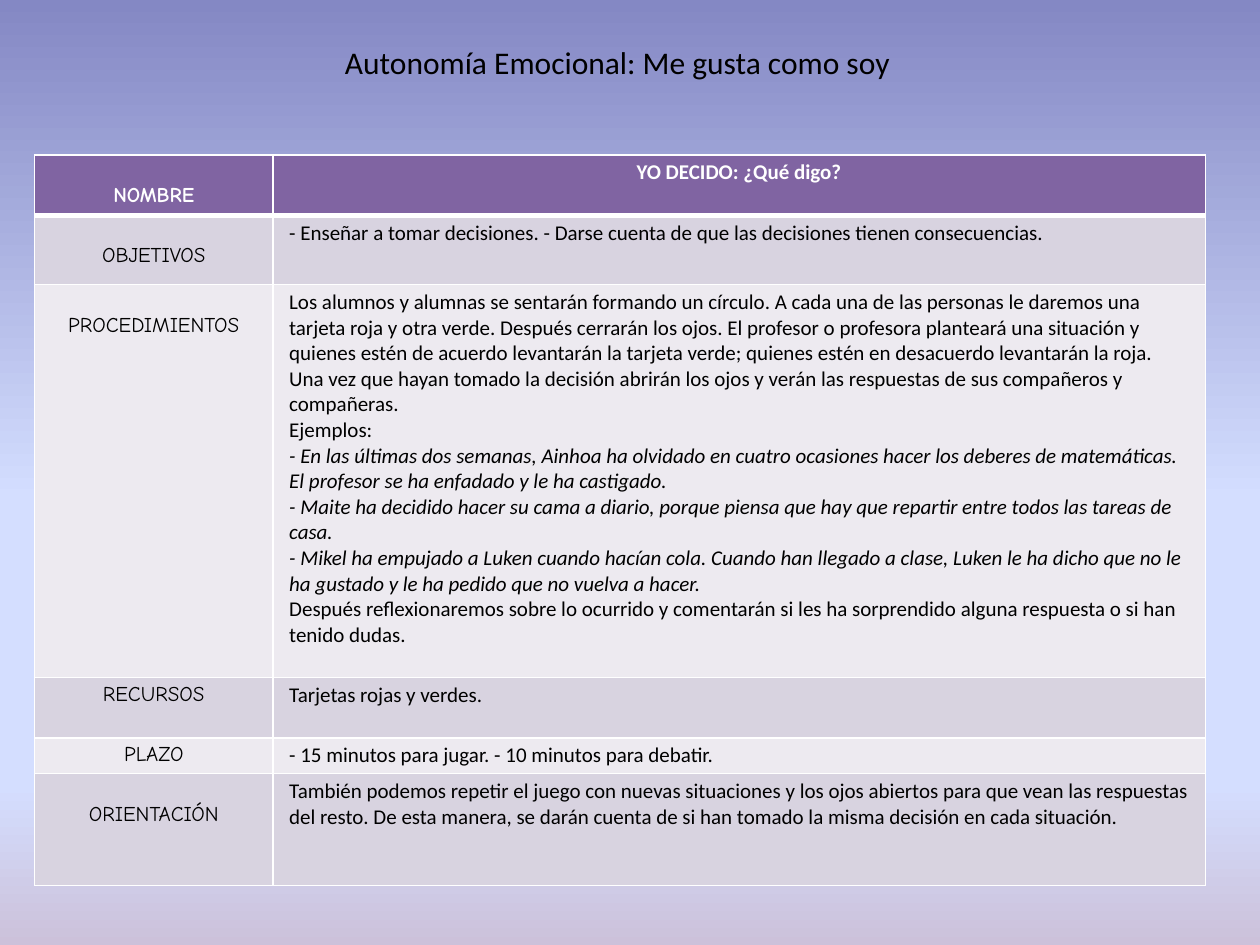
from lxml.etree import SubElement
from pptx import Presentation
from pptx.dml.color import RGBColor
from pptx.enum.text import MSO_ANCHOR, MSO_AUTO_SIZE, PP_ALIGN
from pptx.oxml.ns import qn
from pptx.util import Cm, Pt

COLORS = {
    "header": "8064A2",
    "band_dark": "D8D3E0",
    "band_light": "EDEAF0",
    "white": "FFFFFF",
    "black": "000000",
}
BACKGROUND_STOPS = [(0, "8488C4"), (53, "D4DEFF"), (83, "D4DEFF"), (100, "CCC1DA")]
COLUMN_WIDTHS = [4.8, 18.8]
LEFT, CENTER, JUSTIFY = PP_ALIGN.LEFT, PP_ALIGN.CENTER, PP_ALIGN.JUSTIFY

PROCEDURE = [
    "Los alumnos y alumnas se sentarán formando un círculo. A cada una de las personas "
    "le daremos una tarjeta roja y otra verde. Después cerrarán los ojos. El profesor o "
    "profesora planteará una situación y quienes estén de acuerdo levantarán la tarjeta "
    "verde; quienes estén en desacuerdo levantarán la roja. Una vez que hayan tomado la "
    "decisión abrirán los ojos y verán las respuestas de sus compañeros y compañeras.",
    "Ejemplos:",
    "- En las últimas dos semanas, Ainhoa ha olvidado en cuatro ocasiones hacer los "
    "deberes de matemáticas. El profesor se ha enfadado y le ha castigado.",
    "- Maite ha decidido hacer su cama a diario, porque piensa que hay que repartir "
    "entre todos las tareas de casa.",
    "- Mikel ha empujado a Luken cuando hacían cola. Cuando han llegado a clase, Luken "
    "le ha dicho que no le ha gustado y le ha pedido que no vuelva a hacer.",
    "Después reflexionaremos sobre lo ocurrido y comentarán si les ha sorprendido alguna "
    "respuesta o si han tenido dudas.",
]
GUIDANCE = (
    "También podemos repetir el juego con nuevas situaciones y los ojos abiertos para que "
    "vean las respuestas del resto. De esta manera, se darán cuenta de si han tomado la "
    "misma decisión en cada situación."
)
# label, paragraphs, alignment, row height, label lowered by one line
ROWS = [
    ("NOMBRE", ["YO DECIDO: ¿Qué digo?"], CENTER, 1.22, True),
    ("OBJETIVOS", ["- Enseñar a tomar decisiones. - Darse cuenta de que las decisiones "
                   "tienen consecuencias."], JUSTIFY, 1.4, True),
    ("PROCEDIMIENTOS", PROCEDURE, LEFT, 7.92, True),
    ("RECURSOS", ["Tarjetas rojas y verdes."], JUSTIFY, 1.22, False),
    ("PLAZO", ["- 15 minutos para jugar. - 10 minutos para debatir."], LEFT, 0.7, False),
    ("ORIENTACIÓN", [GUIDANCE], JUSTIFY, 2.26, True),
]


def write_text(paragraph, text, font="Calibri", size=12, color="black",
               bold=False, italic=False, align=LEFT):
    paragraph.alignment = align
    run = paragraph.add_run()
    run.text = text
    run.font.name = font
    run.font.size = Pt(size)
    run.font.bold = bold
    run.font.italic = italic
    run.font.color.rgb = RGBColor.from_string(COLORS[color])


class SlideBuilder:
    label_font = "Comic Neue"
    side_margin = 0.33
    top_margin = 0.1
    label_drop = 0.48

    def __init__(self, slide):
        self.slide = slide

    def background(self, stops):
        fill = self.slide.background.fill
        fill.gradient()
        fill.gradient_angle = 270
        stop_list = self.slide.element.find(".//" + qn("a:gsLst"))
        for stop in list(stop_list):
            stop_list.remove(stop)
        for position, color in stops:
            stop = SubElement(stop_list, qn("a:gs"), pos=str(position * 1000))
            SubElement(stop, qn("a:srgbClr"), val=color)

    def title(self, text, left, top, width, height):
        shape = self.slide.shapes.title
        shape.left, shape.top = Cm(left), Cm(top)
        shape.width, shape.height = Cm(width), Cm(height)
        frame = shape.text_frame
        frame.auto_size = MSO_AUTO_SIZE.NONE
        frame.vertical_anchor = MSO_ANCHOR.TOP
        write_text(frame.paragraphs[0], text, size=18)

    def borders(self, cell, top, bottom):
        properties = cell._tc.get_or_add_tcPr()
        for side, width in (("L", 1), ("R", 1), ("T", top), ("B", bottom)):
            line = SubElement(properties, qn("a:ln" + side), w=str(Pt(width)))
            fill = SubElement(line, qn("a:solidFill"))
            SubElement(fill, qn("a:srgbClr"), val=COLORS["white"])

    def cell(self, cell, row, paragraphs, drop=0, **style):
        self.borders(cell, top=3 if row == 1 else 1, bottom=3 if row == 0 else 1)
        band = "header" if row == 0 else ("band_light", "band_dark")[row % 2]
        cell.fill.solid()
        cell.fill.fore_color.rgb = RGBColor.from_string(COLORS[band])
        cell.margin_left = cell.margin_right = Cm(self.side_margin)
        cell.margin_top = Cm(self.top_margin + drop)
        cell.margin_bottom = Cm(self.top_margin)
        frame = cell.text_frame
        for index, text in enumerate(paragraphs):
            paragraph = frame.add_paragraph() if index else frame.paragraphs[0]
            is_example = len(paragraphs) > 1 and text.startswith("- ")
            write_text(paragraph, text, color="black" if row else "white",
                       bold=row == 0, italic=is_example, **style)

    def table(self, rows, left, top):
        height = sum(row[3] for row in rows)
        frame = self.slide.shapes.add_table(
            len(rows), len(COLUMN_WIDTHS), Cm(left), Cm(top),
            Cm(sum(COLUMN_WIDTHS)), Cm(height))
        table = frame.table
        table.first_row = table.horz_banding = False
        for column, width in zip(table.columns, COLUMN_WIDTHS):
            column.width = Cm(width)
        for index, (label, paragraphs, align, row_height, lowered) in enumerate(rows):
            table.rows[index].height = Cm(row_height)
            self.cell(table.cell(index, 0), index, [label], align=CENTER,
                      font=self.label_font, drop=self.label_drop if lowered else 0)
            self.cell(table.cell(index, 1), index, paragraphs, align=align)


def main():
    presentation = Presentation()
    presentation.slide_width, presentation.slide_height = Cm(25.4), Cm(19.05)
    slide = presentation.slides.add_slide(presentation.slide_layouts[5])
    builder = SlideBuilder(slide)
    builder.background(BACKGROUND_STOPS)
    builder.title("Autonomía Emocional: Me gusta como soy", 6.7, 0.74, 12.4, 1.02)
    builder.table(ROWS, 0.7, 3.12)
    presentation.save("out.pptx")


if __name__ == "__main__":
    main()
